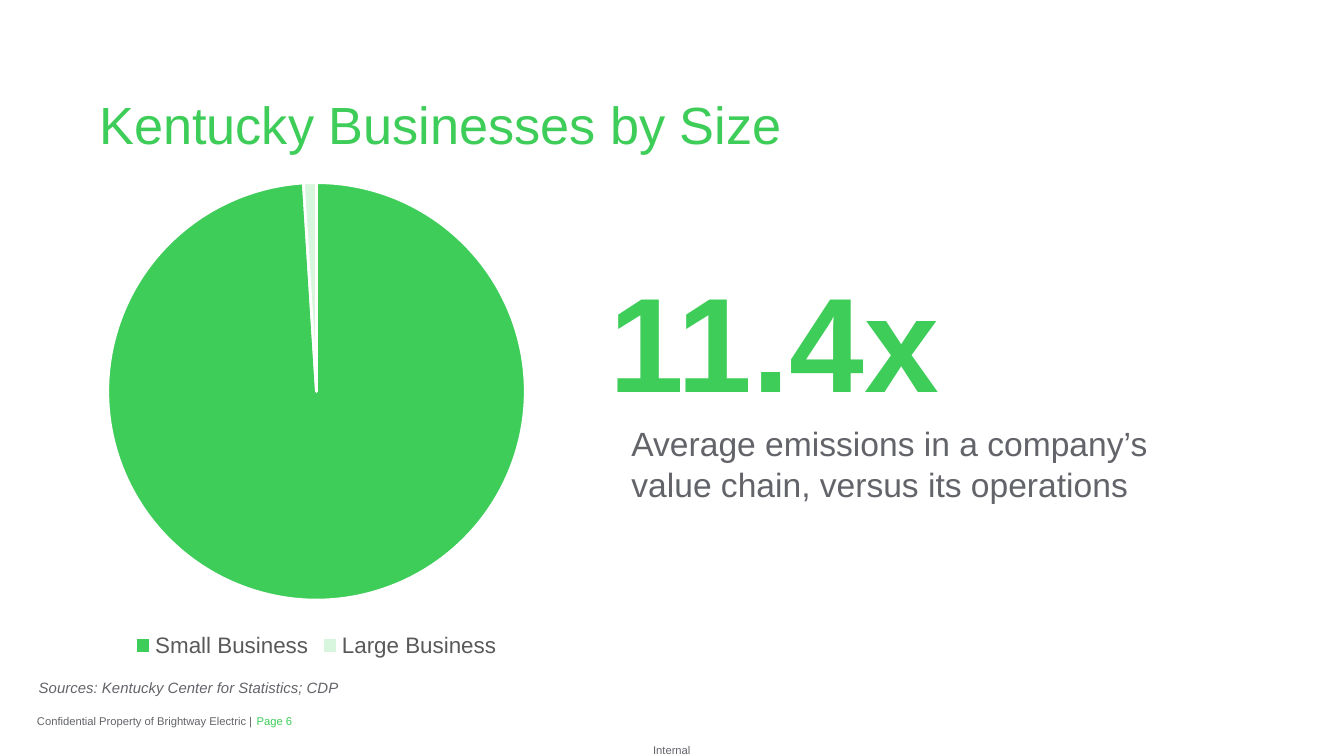
"""Build the Kentucky businesses slide: a pie chart beside a key figure."""
from pptx import Presentation
from pptx.chart.data import CategoryChartData
from pptx.dml.color import RGBColor
from pptx.enum.chart import XL_CHART_TYPE as ChartType, XL_LEGEND_POSITION as LegendPosition
from pptx.enum.text import MSO_ANCHOR as Anchor, MSO_AUTO_SIZE as AutoSize, PP_ALIGN as Align
from pptx.util import Inches, Pt

GREEN = RGBColor(0x3D, 0xCD, 0x58)
PALE_GREEN = RGBColor(0xD8, 0xF5, 0xDE)
GREY = RGBColor(0x62, 0x64, 0x69)
LEGEND_GREY = RGBColor(0x59, 0x59, 0x59)
WHITE = RGBColor(0xFF, 0xFF, 0xFF)
FONT = "Arial"

deck = Presentation()
deck.slide_width = Inches(10)
deck.slide_height = deck.slide_width * 9 // 16
page = deck.slides.add_slide(deck.slide_layouts[5])


def place(left, top, width, height):
    """Turn percentages of the slide into a position and a size."""
    column, row = deck.slide_width / 100, deck.slide_height / 100
    return int(left * column), int(top * row), int(width * column), int(height * row)


def write(box, text, size, color, bold=False, italic=False):
    """Fill a box with one left-aligned paragraph."""
    frame = box.text_frame
    frame.word_wrap = True
    frame.auto_size = AutoSize.NONE
    frame.vertical_anchor = Anchor.TOP
    para = frame.paragraphs[0]
    para.text = text
    para.alignment = Align.LEFT
    font = para.font
    font.name, font.size, font.bold, font.italic = FONT, Pt(size), bold, italic
    font.color.rgb = color
    return frame


title = page.shapes.title
title.left, title.top, title.width, title.height = place(6.4, 12.27, 67.1, 14.93)
write(title, "Kentucky Businesses by Size", 28, GREEN).paragraphs[0].line_spacing = 0.9

sizes = CategoryChartData()
sizes.categories = ["Small Business", "Large Business"]
sizes.add_series("Series 1", [99, 1])
chart = page.shapes.add_chart(ChartType.PIE, *place(-4.3, 21.7, 55.7, 66), sizes).chart
chart.has_title = False
chart.font.name, chart.font.size = FONT, Pt(10)
chart.has_legend = True
legend = chart.legend
legend.position = LegendPosition.BOTTOM
legend.include_in_layout = False
legend.font.name, legend.font.size = FONT, Pt(12)
legend.font.color.rgb = LEGEND_GREY
plot = chart.plots[0]
plot.vary_by_categories = True
for index, color in enumerate([GREEN, PALE_GREEN]):
    slice_format = plot.series[0].points[index].format
    slice_format.fill.solid()
    slice_format.fill.fore_color.rgb = color
    slice_format.line.color.rgb = WHITE
    slice_format.line.width = Pt(1.5)

small_print = [
    ("Internal", 48.6, 98.3, 3, GREY, Anchor.TOP),
    ("Page 6", 19.1, 94.45, 5.7, GREEN, Anchor.MIDDLE),
    ("Confidential Property of Brightway Electric |", 2.75, 94.45, 16.5, GREY, Anchor.MIDDLE),
]
for text, left, top, width, color, anchor in small_print:
    box = page.shapes.add_textbox(*place(left, top, width, 1.78))
    frame = write(box, text, 6, color)
    frame.vertical_anchor = anchor
    frame.margin_left = frame.margin_right = frame.margin_top = frame.margin_bottom = 0

statements = [
    ("Sources: Kentucky Center for Statistics; CDP", (1.9, 88.9, 34.7, 4.27), 8, GREY, False, True),
    ("11.4x", (44.4, 33.24, 43.9, 23.3), 72, GREEN, True, False),
    ("Average emissions in a company’s value chain, versus its operations",
     (46, 55.1, 40.7, 12.62), 18, GREY, False, False),
]
for text, area, size, color, bold, italic in statements:
    write(page.shapes.add_textbox(*place(*area)), text, size, color, bold, italic)

deck.save("out.pptx")
